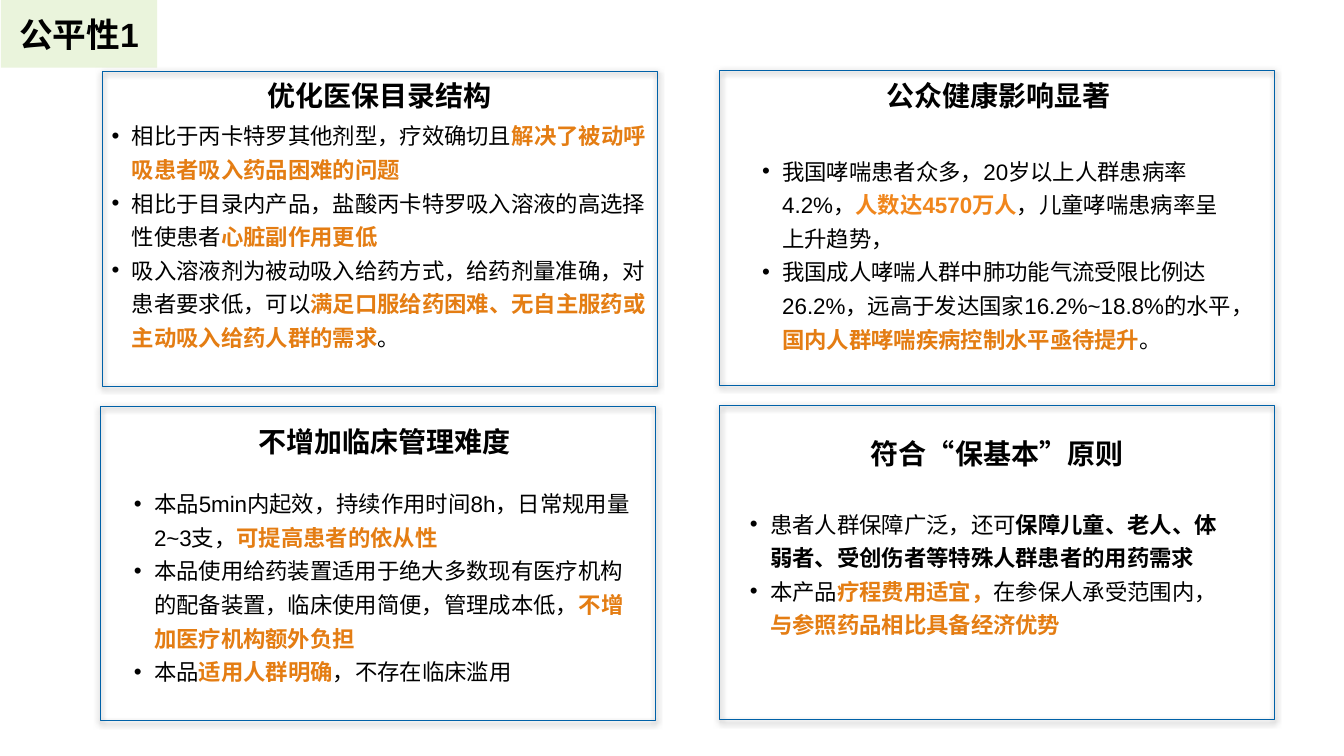
from dataclasses import dataclass

from lxml.etree import SubElement
from pptx import Presentation
from pptx.dml.color import RGBColor
from pptx.enum.lang import MSO_LANGUAGE_ID
from pptx.enum.shapes import MSO_SHAPE
from pptx.enum.text import MSO_ANCHOR, MSO_AUTO_SIZE, PP_ALIGN
from pptx.oxml.ns import qn
from pptx.shapes.autoshape import Shape
from pptx.slide import Slide
from pptx.util import Inches, Pt

BLACK = RGBColor(0x00, 0x00, 0x00)
ORANGE = RGBColor(0xE4, 0x7D, 0x13)
AMBER = RGBColor(0xF0, 0x86, 0x1C)
BLUE = RGBColor(0x00, 0x61, 0xA8)
GREEN = RGBColor(0xEA, 0xF4, 0xDC)
FRAME_W, FRAME_H = 5.5, 3.12
INDENT = 0.2


@dataclass(frozen=True)
class Box:
    left: float
    top: float
    width: float
    height: float


@dataclass(frozen=True)
class Part:
    text: str
    bold: bool = False
    color: RGBColor = BLACK


def key(text: str, color: RGBColor = ORANGE) -> Part:
    """Return a bold, coloured part of a sentence."""
    return Part(text, True, color)


@dataclass(frozen=True)
class Panel:
    left: float
    top: float
    title: str
    head: Box
    body: Box
    items: list[list[Part]]


PANELS = [
    Panel(1.02, 0.71, "优化医保目录结构",
          Box(1.12, 0.71, 5.29, 0.45), Box(1.01, 1.1, 5.5, 2.46), [
              [Part("相比于丙卡特罗其他剂型，疗效确切且"),
               key("解决了被动呼吸患者吸入药品困难的问题")],
              [Part("相比于目录内产品，盐酸丙卡特罗吸入溶液的高选择性使患者"),
               key("心脏副作用更低")],
              [Part("吸入溶液剂为被动吸入给药方式，给药剂量准确，对患者要求低，可以"),
               key("满足口服给药困难、无自主服药或主动吸入给药人群的需求"),
               Part("。")],
          ]),
    Panel(7.14, 0.7, "公众健康影响显著",
          Box(7.46, 0.7, 4.89, 0.46), Box(7.46, 1.45, 4.86, 2.12), [
              [Part("我国哮喘患者众多，20岁以上人群患病率4.2%，"),
               key("人数达4570万人", AMBER),
               Part("，儿童哮喘患病率呈上升趋势，")],
              [Part("我国成人哮喘人群中肺功能气流受限比例达26.2%，"
                    "远高于发达国家16.2%~18.8%的水平，"),
               key("国内人群哮喘疾病控制水平亟待提升"),
               Part("。")],
          ]),
    Panel(1, 4.03, "不增加临床管理难度",
          Box(2.01, 4.14, 3.61, 0.45), Box(1.23, 4.75, 5.17, 2.09), [
              [Part("本品5min内起效，持续作用时间8h，日常规用量2~3支，"),
               key("可提高患者的依从性")],
              [Part("本品使用给药装置适用于绝大多数现有医疗机构的配备装置，"
                    "临床使用简便，管理成本低，"),
               key("不增加医疗机构额外负担")],
              [Part("本品"), key("适用人群明确"), Part("，不存在临床滥用")],
          ]),
    Panel(7.14, 4.02, "符合“保基本”原则",
          Box(7.58, 4.26, 4.62, 0.45), Box(7.34, 4.95, 4.86, 1.42), [
              [Part("患者人群保障广泛，还可"),
               Part("保障儿童、老人、体弱者、受创伤者等特殊人群患者的用药需求", True)],
              [Part("本产品"), key("疗程费用适宜，"),
               Part("在参保人承受范围内，"), key("与参照药品相比具备经济优势")],
          ]),
]


def place(shape: Shape, box: Box) -> None:
    shape.left, shape.top = Inches(box.left), Inches(box.top)
    shape.width, shape.height = Inches(box.width), Inches(box.height)


def add_part(para, part: Part, size: int) -> None:
    run = para.add_run()
    run.text = part.text
    font = run.font
    font.name, font.size, font.bold = "Arial", Pt(size), part.bold
    font.color.rgb = part.color
    font.language_id = MSO_LANGUAGE_ID.SIMPLIFIED_CHINESE


def add_text(slide: Slide, box: Box) -> Shape:
    size = (Inches(n) for n in (box.left, box.top, box.width, box.height))
    shape = slide.shapes.add_textbox(*size)
    shape.text_frame.word_wrap = True
    return shape


def set_title(shape: Shape, text: str, size: int, anchor: MSO_ANCHOR) -> None:
    frame = shape.text_frame
    frame.word_wrap = True
    frame.auto_size = MSO_AUTO_SIZE.NONE
    frame.vertical_anchor = anchor
    para = frame.paragraphs[0]
    para.alignment = PP_ALIGN.CENTER
    add_part(para, Part(text, True), size)


def add_list(slide: Slide, panel: Panel) -> None:
    frame = add_text(slide, panel.body).text_frame
    frame.auto_size = MSO_AUTO_SIZE.SHAPE_TO_FIT_TEXT
    for i, item in enumerate(panel.items):
        para = frame.add_paragraph() if i else frame.paragraphs[0]
        para.line_spacing = 1.25
        props = para._p.get_or_add_pPr()
        props.set("marL", str(Inches(INDENT)))
        props.set("indent", str(-Inches(INDENT)))
        SubElement(props, qn("a:buFont"), typeface="Arial")
        SubElement(props, qn("a:buChar"), char="•")
        for part in item:
            add_part(para, part, 16)


def add_frame(slide: Slide, panel: Panel) -> None:
    """Draw the blue outline of a panel with a soft shadow below it."""
    shape = slide.shapes.add_shape(
        MSO_SHAPE.PENTAGON, Inches(panel.left), Inches(panel.top),
        Inches(FRAME_W), Inches(FRAME_H))
    shape.adjustments[0] = 0
    shape.fill.background()
    shape.line.color.rgb = BLUE
    shape.line.width = Pt(0.75)
    shape.shadow.inherit = False
    effects = shape._element.spPr.find(qn("a:effectLst"))
    shadow = SubElement(effects, qn("a:outerShdw"), blurRad=str(Pt(4.5)),
                        dist=str(Pt(1.5)), dir="5400000", rotWithShape="0")
    color = SubElement(shadow, qn("a:srgbClr"), val=str(BLACK))
    SubElement(color, qn("a:alpha"), val="63000")


def main() -> None:
    deck = Presentation()
    deck.slide_width, deck.slide_height = Inches(13.33), Inches(7.5)
    slide = deck.slides.add_slide(deck.slide_layouts.get_by_name("Title Only"))
    title = slide.shapes.title
    place(title, Box(0.01, 0, 1.55, 0.67))
    title.fill.solid()
    title.fill.fore_color.rgb = GREEN
    set_title(title, "公平性1", 24, MSO_ANCHOR.MIDDLE)
    for panel in PANELS:
        head = add_text(slide, panel.head)
        set_title(head, panel.title, 20, MSO_ANCHOR.BOTTOM)
        add_list(slide, panel)
        add_frame(slide, panel)
    deck.save("out.pptx")


if __name__ == "__main__":
    main()
